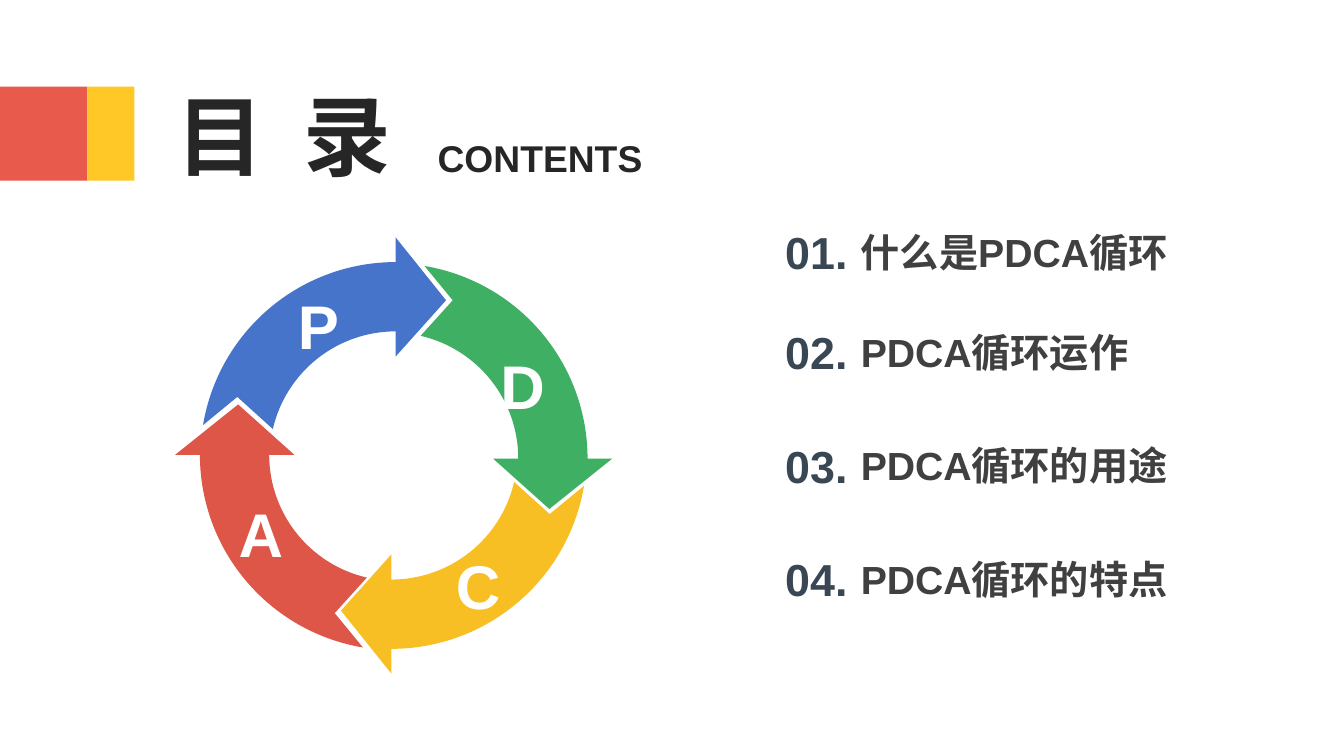
from math import cos, radians, sin, tan

from pptx import Presentation
from pptx.dml.color import RGBColor
from pptx.enum.lang import MSO_LANGUAGE_ID as LANG
from pptx.enum.shapes import MSO_SHAPE as SHAPE
from pptx.enum.text import MSO_ANCHOR as ANCHOR, MSO_AUTO_SIZE as AUTO, PP_ALIGN as ALIGN
from pptx.oxml.ns import qn
from pptx.util import Inches, Pt
from lxml.etree import SubElement

COLORS = {
    "red": "E85A4B", "yellow": "FFC826", "ink": "262626", "item": "404040", "number": "394754",
    "plan": "4674CA", "do": "3FAF63", "check": "F8BF24", "act": "DE5647", "white": "FFFFFF",
}
COLS, ROWS = 160, 90
TITLE_ONLY = 5


def rgb(name):
    return RGBColor.from_string(COLORS[name])


def write(tf, text, size, color, align=ALIGN.LEFT, anchor=ANCHOR.TOP, wrap=True,
          insets=None, spacing=None, tracking=None):
    """Fill a text frame with one bold paragraph; insets are left, top, right, bottom."""
    tf.auto_size, tf.word_wrap, tf.vertical_anchor = AUTO.NONE, wrap, anchor
    if insets is not None:
        tf.margin_left, tf.margin_top, tf.margin_right, tf.margin_bottom = insets
    p = tf.paragraphs[0]
    p.alignment = align
    if spacing:
        p.line_spacing, p.space_before, p.space_after = spacing
    r = p.add_run()
    r.text = text
    font = r.font
    font.name, font.size, font.bold = "Arial", Pt(size), True
    font.color.rgb = rgb(color)
    font.language_id = LANG.SIMPLIFIED_CHINESE
    if tracking:
        font._element.set("spc", str(round(tracking * 100)))


def arc(radius, start, end, parts=2):
    """Bezier segments along a circle, angles in degrees clockwise from the right."""
    step = radians(end - start) / parts
    k = 4 / 3 * tan(step / 4)
    segments = []
    for i in range(parts):
        a = radians(start) + i * step
        b = a + step
        segments.append([
            (radius * (cos(a) - k * sin(a)), radius * (sin(a) + k * cos(a))),
            (radius * (cos(b) + k * sin(b)), radius * (sin(b) - k * cos(b))),
            (radius * cos(b), radius * sin(b))])
    return segments


# Quarter arrow around (0, 0): head at the top, notched tail at the left.
# A segment is one point for a line, three for a curve.
ARROW = ([[(0, -26.2)], [(6, -18.7)], [(0, -12)], [(0, -15)]] + arc(15, -90, -167)
         + [[(-18.84, -7.2)], [(23.25 * cos(radians(-170.5)), 23.25 * sin(radians(-170.5)))]]
         + arc(23.25, -170.5, -90))


def bend(sp, segments):
    """Join the line steps of each three-point segment into one curve."""
    lines = iter(list(sp._element.iter(qn("a:lnTo"))))
    for segment in segments:
        steps = [next(lines) for _ in segment]
        if len(steps) == 3:
            curve = SubElement(steps[0].getparent(), qn("a:cubicBezTo"))
            steps[0].addprevious(curve)
            for step in steps:
                curve.append(step[0])
                step.getparent().remove(step)


class Deck:
    def __init__(self):
        self.prs = Presentation()
        self.prs.slide_width, self.prs.slide_height = Inches(13.333), Inches(7.5)
        self.s = self.prs.slides.add_slide(self.prs.slide_layouts[TITLE_ONLY])

    def x(self, cols):
        return round(self.prs.slide_width * cols / COLS)

    def y(self, rows):
        return round(self.prs.slide_height * rows / ROWS)

    def box(self, left, top, width, height):
        return self.x(left), self.y(top), self.x(width), self.y(height)

    def paint(self, sp, color):
        sp.fill.solid()
        sp.fill.fore_color.rgb = rgb(color)
        sp.line.fill.background()
        sp.shadow.inherit = False

    def title(self, box, text, **fmt):
        sp = self.s.shapes.title
        sp.left, sp.top, sp.width, sp.height = self.box(*box)
        write(sp.text_frame, text, **fmt)

    def text(self, box, text, **fmt):
        write(self.s.shapes.add_textbox(*self.box(*box)).text_frame, text, **fmt)

    def block(self, box, color):
        self.paint(self.s.shapes.add_shape(SHAPE.RECTANGLE, *self.box(*box)), color)

    def arrow(self, center, turns, letter, color, insets):
        """Draw the quarter arrow after a number of clockwise quarter turns."""
        points = [point for segment in ARROW for point in segment]
        for _ in range(turns):
            points = [(-y, x) for x, y in points]
        cx, cy = center
        points = [(self.x(cx + x), self.y(cy + y)) for x, y in points]
        builder = self.s.shapes.build_freeform(*points[0])
        builder.add_line_segments(points[1:], close=True)
        sp = builder.convert_to_shape()
        bend(sp, ARROW[1:])
        self.paint(sp, color)
        write(sp.text_frame, letter, size=44, color="white", align=ALIGN.CENTER,
              anchor=ANCHOR.MIDDLE, insets=[Inches(i) for i in insets],
              spacing=(1.2, Pt(4.5), Pt(4.5)))


def main():
    deck = Deck()

    # Heading with its colour blocks
    deck.block((0, 10.3, 10.4, 11.2), "red")
    deck.block((10.4, 10.3, 5.6, 11.2), "yellow")
    deck.title((15.9, 9.7, 35.8, 12.6), "目 录", size=62.6, color="ink", align=ALIGN.CENTER,
               anchor=ANCHOR.MIDDLE, insets=(0, 0, 0, 0), tracking=7.3)
    deck.text((46.6, 16.1, 35.4, 5.4), "CONTENTS", size=26.6, color="ink",
              align=ALIGN.CENTER, insets=(0, 0, 0, 0))

    # Numbered contents
    items = [(26.2, "什么是PDCA循环"), (38.1, "PDCA循环运作"),
             (51.6, "PDCA循环的用途"), (65.1, "PDCA循环的特点")]
    for number, (top, item) in enumerate(items, 1):
        deck.text((101.3, top + 0.4, 43.2, 6.8), item, size=28, color="item")
        deck.text((92.3, top, 9.8, 7.7), f"{number:02}.", size=32, color="number", wrap=False)

    # PDCA ring
    deck.arrow((46.7, 54.6), 1, "D", "do", (0.24, 0, 0.12, 0.2))
    deck.arrow((47.1, 54.45), 0, "P", "plan", (0.39, 0, 0.51, 0.31))
    deck.arrow((47.05, 54.15), 3, "A", "act", (0, 0, 0.2, 0))
    deck.arrow((46.6, 54), 2, "C", "check", (0.31, 0, 0, 0))

    deck.prs.save("out.pptx")


if __name__ == "__main__":
    main()
